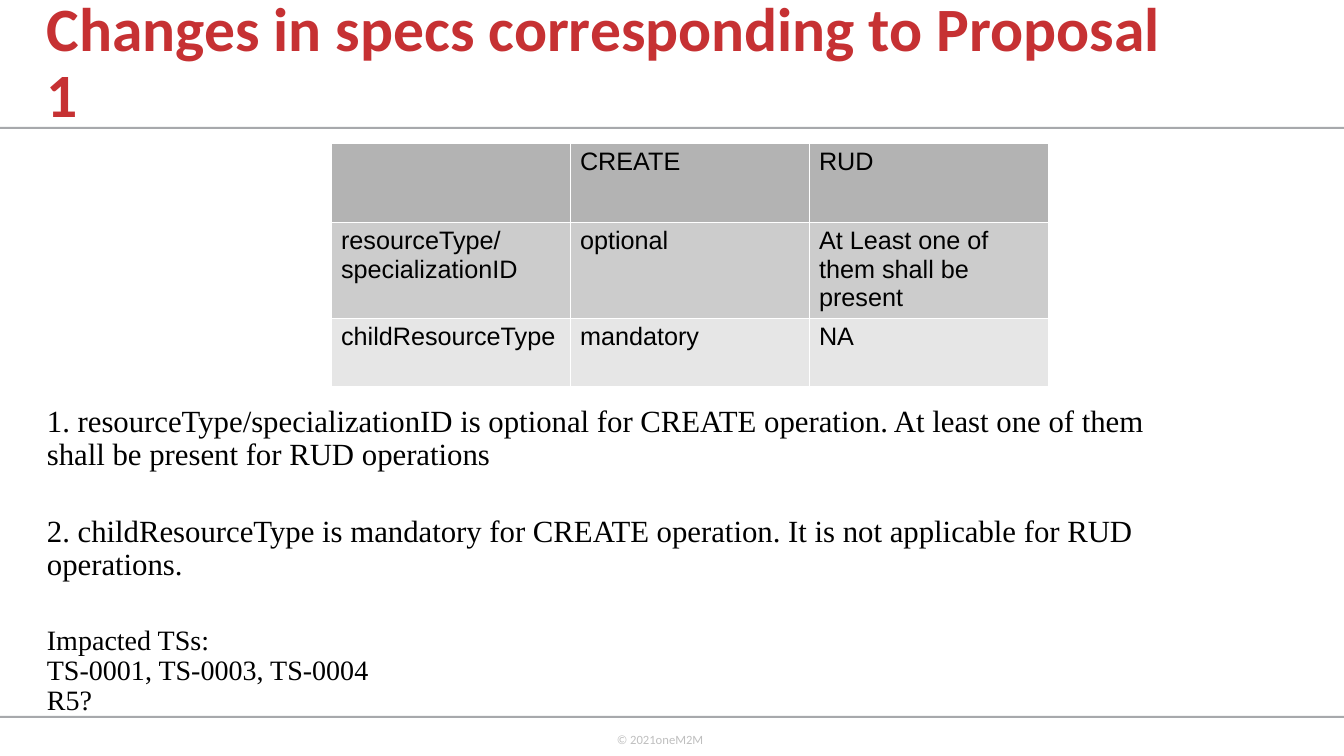
from dataclasses import dataclass

from lxml.etree import SubElement
from pptx import Presentation
from pptx.dml.color import RGBColor
from pptx.enum.shapes import MSO_SHAPE
from pptx.enum.text import MSO_ANCHOR
from pptx.oxml.ns import qn
from pptx.util import Pt

TITLE = "Changes in specs corresponding to Proposal 1"
FOOTER = "© 2021oneM2M"
OPERATIONS = [
    ["", "CREATE", "RUD"],
    ["resourceType/specializationID", "optional", "At Least one of them shall be present"],
    ["childResourceType", "mandatory", "NA"],
]
RULES = [
    "1. resourceType/specializationID is optional for CREATE operation. "
    "At least one of them shall be present for RUD operations",
    "2. childResourceType is mandatory for CREATE operation. "
    "It is not applicable for RUD operations.",
]
IMPACT = ["Impacted TSs:", "TS-0001, TS-0003, TS-0004", "R5?"]


@dataclass(frozen=True)
class Theme:
    title: str = "C63133"
    text: str = "000000"
    footer: str = "BFBFBF"
    divider: str = "A7A9AC"
    border: str = "FFFFFF"
    rows: tuple = ("B3B3B3", "CCCCCC", "E6E6E6")
    heading_font: str = "Calibri"
    table_font: str = "Arial"
    body_font: str = "Times New Roman"
    title_size: int = 44
    rule_size: int = 22
    impact_size: int = 20
    table_size: int = 18
    footer_size: int = 9
    border_width: float = 0.06
    line_spacing: float = 0.9


THEME = Theme()
SLIDE_WIDTH, SLIDE_HEIGHT = 1344, 756
DIVIDER_TOPS = (127, 716)
COLUMN_WIDTH = 239
ROW_HEIGHTS = (79, 95, 68)
BLOCK_GAP = 31


def px(length):
    return round(length * 914400 / 100.8)


def box(left, top, width, height):
    return [px(length) for length in (left, top, width, height)]


def style(paragraph, font_name, size, color, bold=False):
    font = paragraph.font
    font.name, font.size, font.bold = font_name, Pt(size), bold
    font.color.rgb = RGBColor.from_string(color)


def add_text_frame(slide, area, wrap=True):
    frame = slide.shapes.add_textbox(*box(*area)).text_frame
    frame.word_wrap = wrap
    return frame


def add_divider(slide, top):
    shape = slide.shapes.add_shape(MSO_SHAPE.RECTANGLE, *box(0, top, SLIDE_WIDTH, 2))
    shape.shadow.inherit = False
    shape.fill.solid()
    shape.fill.fore_color.rgb = RGBColor.from_string(THEME.divider)
    shape.line.fill.background()


def add_borders(cell):
    properties = cell._tc.get_or_add_tcPr()
    for position, side in enumerate(("a:lnL", "a:lnR", "a:lnT", "a:lnB")):
        line = properties.makeelement(qn(side), {"w": str(Pt(THEME.border_width))})
        properties.insert(position, line)
        fill = SubElement(line, qn("a:solidFill"))
        SubElement(fill, qn("a:srgbClr"), val=THEME.border)


def add_operations_table(slide):
    columns = len(OPERATIONS[0])
    area = box(331, 143, COLUMN_WIDTH * columns, sum(ROW_HEIGHTS))
    table = slide.shapes.add_table(len(OPERATIONS), columns, *area).table
    table.first_row = table.horz_banding = False
    for column in table.columns:
        column.width = px(COLUMN_WIDTH)
    for row, height, color, texts in zip(table.rows, ROW_HEIGHTS, THEME.rows, OPERATIONS):
        row.height = px(height)
        for cell, text in zip(row.cells, texts):
            cell.text = text
            cell.margin_bottom = 0
            style(cell.text_frame.paragraphs[0], THEME.table_font, THEME.table_size, THEME.text)
            cell.fill.solid()
            cell.fill.fore_color.rgb = RGBColor.from_string(color)
            add_borders(cell)


def add_title(slide):
    frame = add_text_frame(slide, (37, 0, 1153, 129))
    frame.vertical_anchor = MSO_ANCHOR.MIDDLE
    frame.text = TITLE
    paragraph = frame.paragraphs[0]
    paragraph.line_spacing = THEME.line_spacing
    style(paragraph, THEME.heading_font, THEME.title_size, THEME.title, bold=True)


def add_body(slide):
    frame = add_text_frame(slide, (37, 401, 1159, 312))
    frame.text = "\n".join(RULES + IMPACT)
    for index, paragraph in enumerate(frame.paragraphs):
        is_rule = index < len(RULES)
        paragraph.line_spacing = THEME.line_spacing
        paragraph.space_before = Pt(BLOCK_GAP if 0 < index <= len(RULES) else 0)
        size = THEME.rule_size if is_rule else THEME.impact_size
        style(paragraph, THEME.body_font, size, THEME.text)


def add_footer(slide):
    frame = add_text_frame(slide, (607, 727, 122, 40), wrap=False)
    frame.text = FOOTER
    style(frame.paragraphs[0], THEME.heading_font, THEME.footer_size, THEME.footer)


def main():
    presentation = Presentation()
    presentation.slide_width, presentation.slide_height = px(SLIDE_WIDTH), px(SLIDE_HEIGHT)
    slide = presentation.slides.add_slide(presentation.slide_layouts[6])
    for top in DIVIDER_TOPS:
        add_divider(slide, top)
    add_footer(slide)
    add_title(slide)
    add_body(slide)
    add_operations_table(slide)
    presentation.save("out.pptx")


if __name__ == "__main__":
    main()
